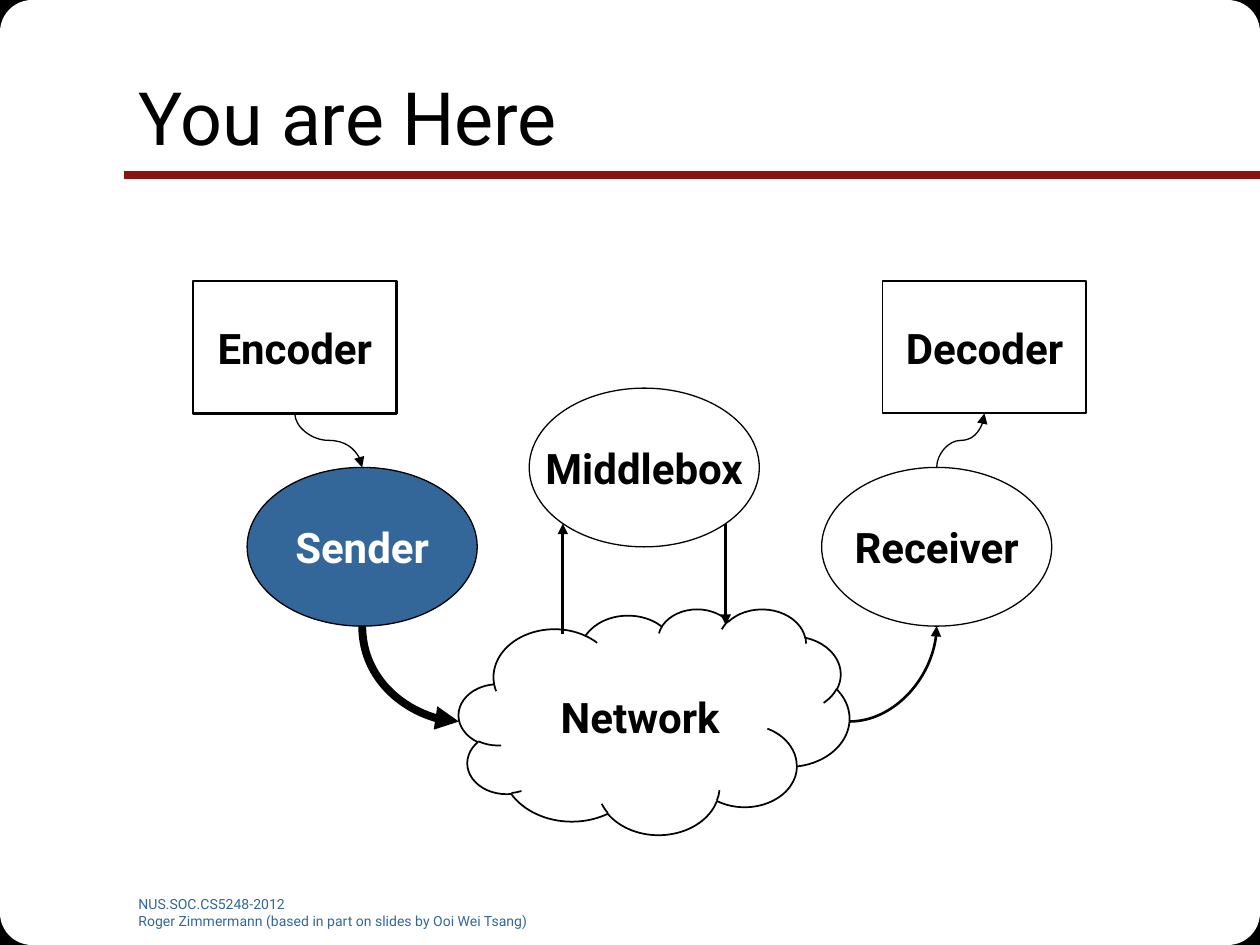
from dataclasses import dataclass

from lxml.etree import SubElement
from pptx import Presentation
from pptx.dml.color import RGBColor as RGB
from pptx.enum.shapes import MSO_CONNECTOR as CONN, MSO_SHAPE as SHAPE
from pptx.enum.text import MSO_ANCHOR as ANCHOR, PP_ALIGN as ALIGN
from pptx.oxml.ns import qn
from pptx.util import Pt


@dataclass(frozen=True)
class Theme:
    font: str = "Roboto"
    title: float = 42
    node: float = 24
    footer: float = 8
    black: RGB = RGB(0, 0, 0)
    white: RGB = RGB(255, 255, 255)
    blue: RGB = RGB(0x33, 0x66, 0x99)
    red: RGB = RGB(0x89, 0x14, 0x11)


T = Theme()
W, H = 720, 540


def style(p, size, color, bold=False, align=ALIGN.LEFT):
    p.alignment = align
    f = p.font
    f.name, f.size, f.bold = T.font, Pt(size), bold
    f.color.rgb = color


def add_shape(slide, kind, box, fill, line=None):
    sp = slide.shapes.add_shape(kind, *map(Pt, box))
    sp.shadow.inherit = False
    sp.fill.solid()
    sp.fill.fore_color.rgb = fill
    if line:
        sp.line.color.rgb, sp.line.width = T.black, Pt(line)
    else:
        sp.line.fill.background()
    return sp


def add_line(slide, kind, start, end, width, color=T.black, arrow=False):
    cxn = slide.shapes.add_connector(kind, *start, *end)
    cxn.line.color.rgb, cxn.line.width = color, Pt(width)
    if arrow:
        SubElement(cxn.line._get_or_add_ln(), qn("a:tailEnd"), type="triangle")
    SubElement(cxn._element.spPr, qn("a:effectLst"))
    return cxn


def add_curve(slide, start, end, width, preset="curvedConnector3", upright=False):
    """Curved arrow running to the right; an upright one leaves its start vertically."""
    cxn = add_line(slide, CONN.CURVE, start, end, width, arrow=True)
    cxn._element.spPr.find(qn("a:prstGeom")).set("prst", preset)
    if upright:
        (x1, y1), (x2, y2) = start, end
        w, h = abs(y2 - y1), x2 - x1
        cxn.left, cxn.top = (x1 + x2 - w) // 2, (y1 + y2 - h) // 2
        cxn.width, cxn.height = w, h
        xfrm = cxn._element.spPr.find(qn("a:xfrm"))
        xfrm.set("rot", str(270 * 60000))
        xfrm.set("flipH", "1" if y2 > y1 else "0")
        xfrm.set("flipV", "0")
    return cxn


def point(sp, fx, fy):
    """Point at the given fractions of a shape's width and height."""
    return int(sp.left + fx * sp.width), int(sp.top + fy * sp.height)


def frame(slide, box):
    """Black corners rounded off in white."""
    x, y, w, h = box
    for kind, size, fill, line in ((SHAPE.RECTANGLE, 31, T.black, 0.75),
                                   (SHAPE.ROUNDED_RECTANGLE, 110, T.white, None)):
        for left in (x, x + w - size):
            for top in (y, y + h - size):
                add_shape(slide, kind, (left, top, size, size), fill, line)


def heading(slide, box):
    """Title with a rule that runs to the slide's right edge."""
    x, y, w, h = box
    rule_y = Pt(y + 78.5)
    add_line(slide, CONN.STRAIGHT, (Pt(W), rule_y), (Pt(x - 1.2), rule_y), 4.5, T.red)
    title = slide.shapes.title
    slide.shapes._spTree.append(title._element)  # in front of the frame
    title.left, title.top, title.width, title.height = map(Pt, box)
    tf = title.text_frame
    tf.text, tf.vertical_anchor = "You are Here", ANCHOR.MIDDLE
    style(tf.paragraphs[0], T.title, T.black)


def footer(slide, box):
    tf = slide.shapes.add_textbox(*map(Pt, box)).text_frame
    tf.word_wrap = True
    tf.text = ("NUS.SOC.CS5248-2012\n"
               "Roger Zimmermann (based in part on slides by Ooi Wei Tsang)")
    for p in tf.paragraphs:
        style(p, T.footer, T.blue)


def diagram(slide, box):
    """Path of a stream from encoder to decoder."""
    x, y, w, h = box

    def node(text, kind, at, line, fill=T.white, color=T.black):
        left, top, width, height = at
        sp = add_shape(slide, kind, (x + left, y + top, width, height), fill, line)
        tf = sp.text_frame
        tf.text, tf.vertical_anchor = text, ANCHOR.MIDDLE
        tf.word_wrap = kind == SHAPE.CLOUD
        style(tf.paragraphs[0], T.node, color, True, ALIGN.CENTER)
        return sp

    # Nodes
    block, oval = (116.5, 75.6), (131.5, 90.7)
    cloud_w, cloud_h = 223.2, 129
    network = node("Network", SHAPE.CLOUD, (152, h - cloud_h, cloud_w, cloud_h), 1)
    encoder = node("Encoder", SHAPE.RECTANGLE, (0, 0, *block), 1.5)
    sender = node("Sender", SHAPE.OVAL, (31, 106.5, *oval), 0.75, T.blue, T.white)
    middlebox = node("Middlebox", SHAPE.OVAL, (192.2, 61.2, *oval), 0.75)
    receiver = node("Receiver", SHAPE.OVAL, (359.3, 106.5, *oval), 0.75)
    decoder = node("Decoder", SHAPE.RECTANGLE, (w - block[0], 0, *block), 1)

    # Curved arrows
    top, bottom, left, right = (0.5, 0), (0.5, 1), (0, 0.5), (1, 0.5)
    add_curve(slide, point(encoder, *bottom), point(sender, *top), 0.75, upright=True)
    add_curve(slide, point(sender, *bottom), point(network, *left), 4.5,
              "curvedConnector2", upright=True)
    add_curve(slide, point(network, *right), point(receiver, *bottom), 1.5,
              "curvedConnector2")
    add_curve(slide, point(receiver, *top), point(decoder, *bottom), 0.75, upright=True)

    # Straight arrows between the network and the middlebox's diagonal points
    up_x, oval_y = point(middlebox, 0.146, 0.854)
    down_x, _ = point(middlebox, 0.854, 0.854)
    for start, end in (((up_x, Pt(y + 201.6)), (up_x, oval_y)),
                       ((down_x, oval_y), (down_x, Pt(y + 196.5)))):
        add_line(slide, CONN.STRAIGHT, start, end, 1.5, arrow=True)


def main():
    prs = Presentation()
    prs.slide_width, prs.slide_height = Pt(W), Pt(H)
    slide = prs.slides.add_slide(prs.slide_layouts[5])  # title only
    frame(slide, (0, 0, W, H))
    heading(slide, (72, 21.6, 612, 90))
    footer(slide, (72, 508.3, 257.8, 20.2))
    diagram(slide, (110.2, 160.6, 510.6, 316.2))
    prs.save("out.pptx")


if __name__ == "__main__":
    main()
